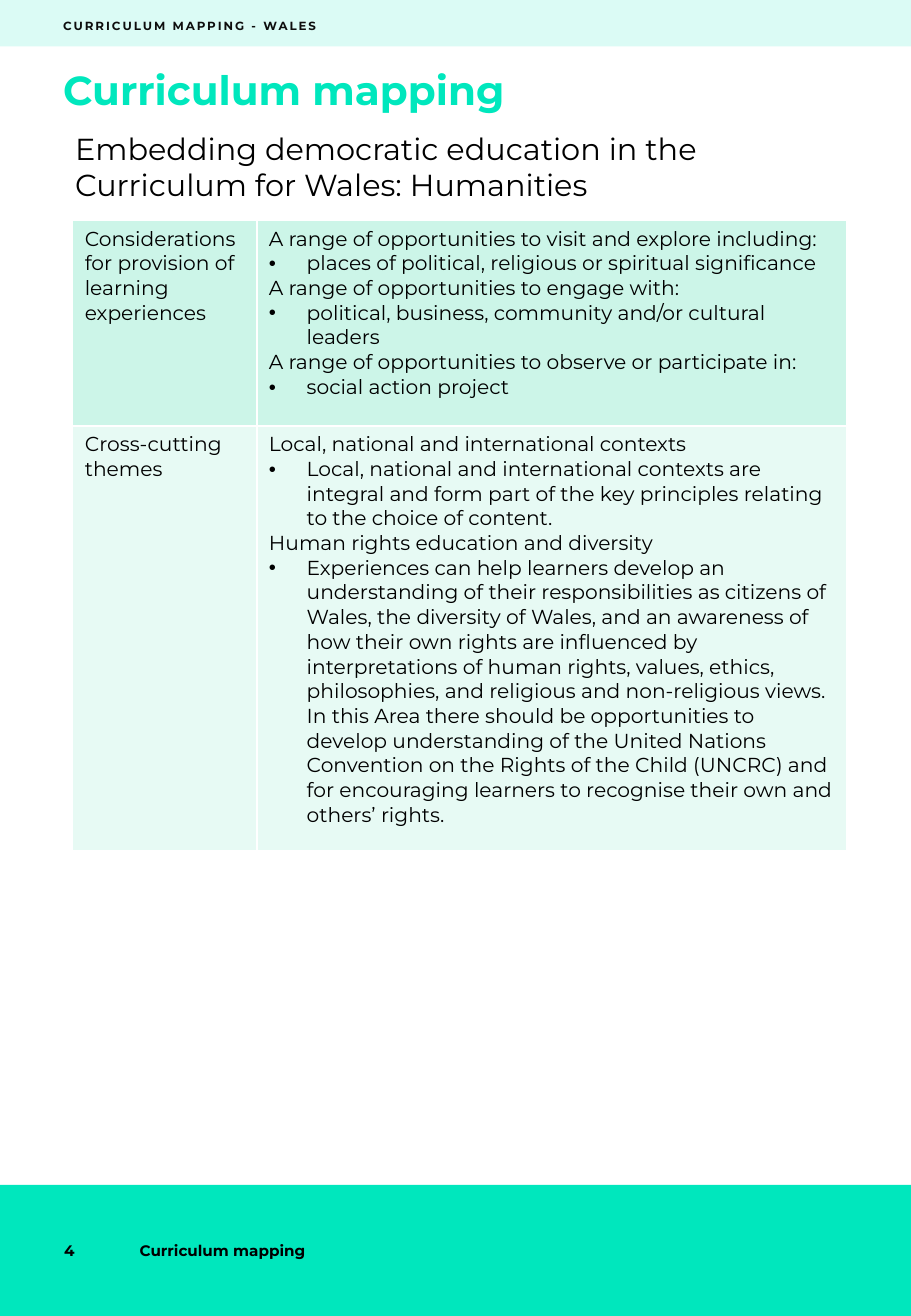
from dataclasses import dataclass

from lxml import etree
from pptx import Presentation
from pptx.dml.color import RGBColor
from pptx.enum.shapes import MSO_SHAPE
from pptx.enum.text import MSO_ANCHOR, MSO_AUTO_SIZE, PP_ALIGN
from pptx.oxml.ns import qn
from pptx.util import Cm, Pt

RECTANGLE = MSO_SHAPE.RECTANGLE
TOP, MIDDLE = MSO_ANCHOR.TOP, MSO_ANCHOR.MIDDLE
NO_AUTOFIT = MSO_AUTO_SIZE.NONE
LEFT = PP_ALIGN.LEFT
FONT = "Montserrat"
COLOURS = {
    "brand": "00E7BD",
    "black": "000000",
    "header": "0D0D0D",
    "white": "FFFFFF",
    "row_dark": "CCF5E8",
    "row_light": "E7FAF4",
}
PAGE_WIDTH, PAGE_HEIGHT = 19.05, 27.53
FOOTER_TOP, FOOTER_HEIGHT = 24.79, 2.74
MARGIN = 1.32
INSET_X, INSET_Y = 0.25, 0.13
BULLET_INDENT = 0.79


@dataclass(frozen=True)
class Band:
    top: float
    height: float
    opacity: int


@dataclass(frozen=True)
class Label:
    text: str
    left: float
    top: float
    width: float
    height: float
    size: float
    colour: str = "black"
    bold: bool = True
    spacing: float = 0
    inset: bool = True
    anchor: MSO_ANCHOR = MIDDLE


@dataclass(frozen=True)
class Topic:
    heading: str
    points: tuple[tuple[str, str], ...]
    height: float
    fill: str


BANDS = (
    Band(0, 0.97, 14),
    Band(FOOTER_TOP, FOOTER_HEIGHT, 100),
)
TITLE = Label("Curriculum mapping", MARGIN, 1.37, 16.41, 0.94, 24,
              colour="brand", inset=False, anchor=TOP)
LABELS = (
    Label("CURRICULUM MAPPING - WALES", MARGIN, 0.18, 6.86, 0.71, 7,
          colour="header", spacing=1.2, inset=False),
    Label("Embedding democratic education in the Curriculum for Wales: Humanities",
          MARGIN, 2.59, 16.99, 1.8, 18, bold=False, anchor=TOP),
    Label("4", 1.09, FOOTER_TOP, 1.57, FOOTER_HEIGHT, 9),
    Label("Curriculum mapping", 2.67, FOOTER_TOP, 7.04, FOOTER_HEIGHT, 9),
)
TABLE_LEFT, TABLE_TOP = 1.52, 4.61
COLUMN_WIDTHS = (3.85, 12.34)
TOPICS = (
    Topic(
        "Considerations for provision of learning experiences",
        (
            ("A range of opportunities to visit and explore including:",
             "places of political, religious or spiritual significance"),
            ("A range of opportunities to engage with:",
             "political, business, community and/or cultural leaders"),
            ("A range of opportunities to observe or participate in:",
             "social action project"),
        ),
        4.3,
        "row_dark",
    ),
    Topic(
        "Cross-cutting themes",
        (
            ("Local, national and international contexts",
             "Local, national and international contexts are integral and form part "
             "of the key principles relating to the choice of content."),
            ("Human rights education and diversity",
             "Experiences can help learners develop an understanding of their "
             "responsibilities as citizens of Wales, the diversity of Wales, and an "
             "awareness of how their own rights are influenced by interpretations of "
             "human rights, values, ethics, philosophies, and religious and "
             "non-religious views. In this Area there should be opportunities to "
             "develop understanding of the United Nations Convention on the Rights "
             "of the Child (UNCRC) and for encouraging learners to recognise their "
             "own and others’ rights."),
        ),
        8.88,
        "row_light",
    ),
)


def rgb(name: str) -> RGBColor:
    return RGBColor.from_string(COLOURS[name])


def write(para, text: str, *, size: float, colour: str = "black",
          bold: bool = False, spacing: float = 0, bullet: bool = False) -> None:
    para.alignment = LEFT
    if bullet:
        properties = para._p.get_or_add_pPr()
        properties.set("marL", str(Cm(BULLET_INDENT)))
        properties.set("indent", str(-Cm(BULLET_INDENT)))
        etree.SubElement(properties, qn("a:buFont")).set("typeface", "Arial")
        etree.SubElement(properties, qn("a:buChar")).set("char", "•")
    span = para.add_run()
    span.text = text
    span.font.name = FONT
    span.font.size = Pt(size)
    span.font.bold = bold
    span.font.color.rgb = rgb(colour)
    if spacing:
        span._r.get_or_add_rPr().set("spc", str(round(spacing * 100)))


def draw_band(page, band: Band) -> None:
    box = page.shapes.add_shape(RECTANGLE, 0, Cm(band.top), Cm(PAGE_WIDTH), Cm(band.height))
    box.shadow.inherit = False
    box.line.fill.background()
    box.fill.solid()
    box.fill.fore_color.rgb = rgb("brand")
    if band.opacity < 100:
        colour = box._element.spPr.find(qn("a:solidFill"))[0]
        etree.SubElement(colour, qn("a:alpha")).set("val", str(band.opacity * 1000))


def fill_label(box, label: Label) -> None:
    box.left, box.top = Cm(label.left), Cm(label.top)
    box.width, box.height = Cm(label.width), Cm(label.height)
    frame = box.text_frame
    frame.word_wrap = True
    frame.auto_size = NO_AUTOFIT
    frame.vertical_anchor = label.anchor
    frame.margin_left = frame.margin_right = Cm(INSET_X if label.inset else 0)
    frame.margin_top = frame.margin_bottom = Cm(INSET_Y if label.inset else 0)
    write(frame.paragraphs[0], label.text, size=label.size, colour=label.colour,
          bold=label.bold, spacing=label.spacing)


def format_cell(cell, fill: str) -> None:
    cell.fill.solid()
    cell.fill.fore_color.rgb = rgb(fill)
    properties = cell._tc.get_or_add_tcPr()
    for position, side in enumerate(("a:lnL", "a:lnR", "a:lnT", "a:lnB")):
        border = etree.Element(qn(side), w=str(Pt(1)))
        paint = etree.SubElement(border, qn("a:solidFill"))
        etree.SubElement(paint, qn("a:srgbClr")).set("val", COLOURS["white"])
        properties.insert(position, border)


def draw_topics(page) -> None:
    table = page.shapes.add_table(
        len(TOPICS), len(COLUMN_WIDTHS), Cm(TABLE_LEFT), Cm(TABLE_TOP),
        Cm(sum(COLUMN_WIDTHS)), Cm(sum(topic.height for topic in TOPICS))).table
    table.first_row = table.horz_banding = False
    for column, width in zip(table.columns, COLUMN_WIDTHS):
        column.width = Cm(width)
    for row, topic in zip(table.rows, TOPICS):
        row.height = Cm(topic.height)
        for cell in row.cells:
            format_cell(cell, topic.fill)
        heading, details = (cell.text_frame for cell in row.cells)
        write(heading.paragraphs[0], topic.heading, size=12)
        for index, (lead, point) in enumerate(topic.points):
            para = details.add_paragraph() if index else details.paragraphs[0]
            write(para, lead, size=12)
            write(details.add_paragraph(), point, size=12, bullet=True)


def main() -> None:
    deck = Presentation()
    deck.slide_width, deck.slide_height = Cm(PAGE_WIDTH), Cm(PAGE_HEIGHT)
    page = deck.slides.add_slide(deck.slide_layouts[5])
    for band in BANDS:
        draw_band(page, band)
    fill_label(page.shapes.title, TITLE)
    for label in LABELS:
        fill_label(page.shapes.add_textbox(0, 0, 0, 0), label)
    draw_topics(page)
    deck.save("out.pptx")


if __name__ == "__main__":
    main()
